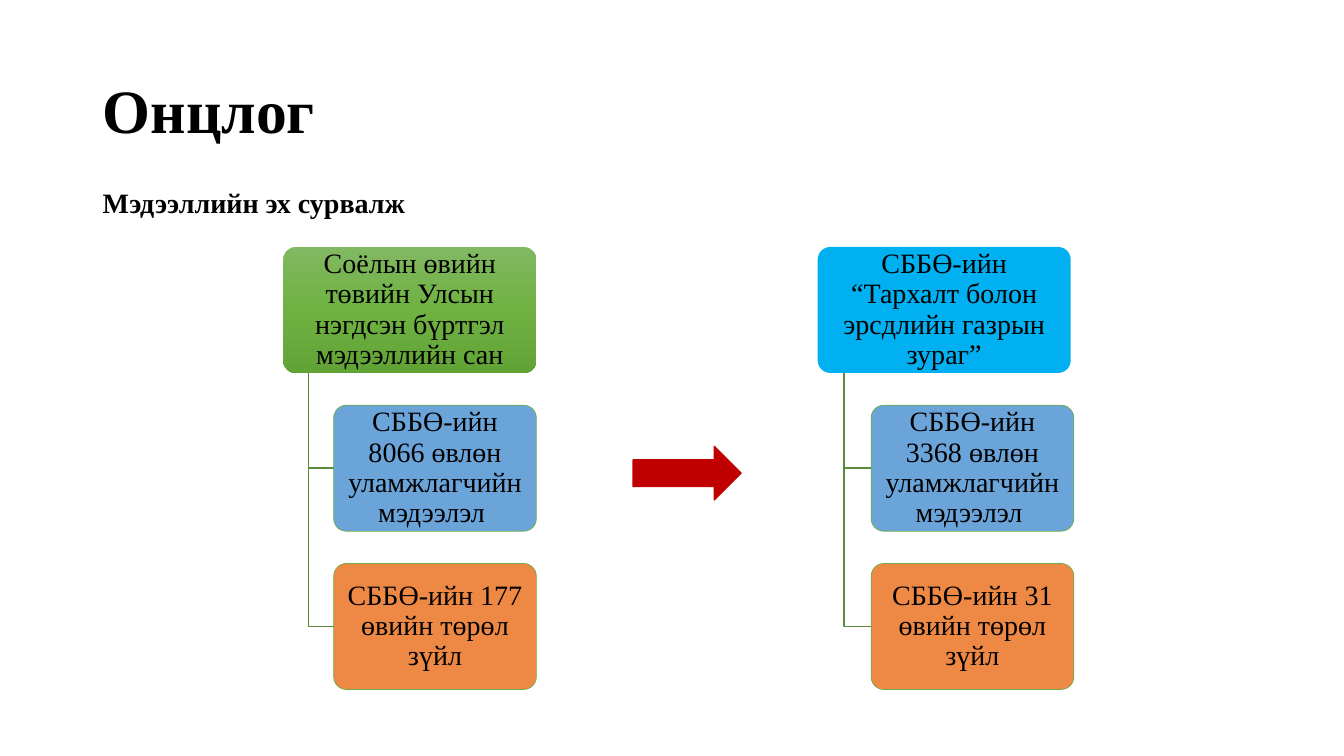
from copy import deepcopy
from dataclasses import dataclass

from lxml import etree
from pptx import Presentation
from pptx.dml.color import RGBColor
from pptx.enum.shapes import MSO_SHAPE
from pptx.enum.text import MSO_ANCHOR, PP_ALIGN
from pptx.oxml.ns import qn
from pptx.util import Inches, Pt

ROUND_RECT = MSO_SHAPE.ROUNDED_RECTANGLE
RIGHT_ARROW = MSO_SHAPE.RIGHT_ARROW
MIDDLE = MSO_ANCHOR.MIDDLE
LEFT, CENTER = PP_ALIGN.LEFT, PP_ALIGN.CENTER

FONT = "Times New Roman"
BLACK, GREEN, DARK_GREEN = "000000", "70AD47", "5A8B39"
BLUE, ORANGE, SKY, RED = "5B9BD5", "ED7D31", "00B0F0", "C00000"
GREEN_GRADIENT = ("81B861", "6FB242", "62A336")

# Tree geometry in inches
TOP, BOX_H, STEP = 2.45, 1.25, 1.57
ROOT_W, CHILD_W = 2.51, 2.01
BOX_FRAME = {"margin_left": Inches(0.04), "margin_right": Inches(0.04),
             "margin_top": Inches(0.03), "margin_bottom": Inches(0.03)}


@dataclass
class Heading:
    text: str
    top: float
    width: float
    height: float
    size: int


@dataclass
class Tree:
    root: str
    fills: tuple[str, ...]
    children: tuple[str, ...]
    left: float
    trunk: float
    child_left: float


HEADINGS = [
    Heading("Онцлог", 0.4, 11.5, 1.45, 44),
    Heading("Мэдээллийн эх сурвалж", 1.7, 4.68, 0.65, 20),
]
TREES = [
    Tree("Соёлын өвийн төвийн Улсын нэгдсэн бүртгэл мэдээллийн сан",
         GREEN_GRADIENT,
         ("СББӨ-ийн 8066 өвлөн уламжлагчийн мэдээлэл ",
          "СББӨ-ийн 177 өвийн төрөл зүйл"),
         2.81, 3.06, 3.31),
    Tree("СББӨ-ийн “Тархалт болон эрсдлийн газрын зураг”",
         (SKY,),
         ("СББӨ-ийн 3368 өвлөн уламжлагчийн мэдээлэл ",
          "СББӨ-ийн 31 өвийн төрөл зүйл"),
         8.11, 8.37, 8.64),
]


def color(value: str) -> RGBColor:
    return RGBColor.from_string(value)


def apply(target, formats: dict) -> None:
    for name, value in formats.items():
        setattr(target, name, value)


def write(sp, text: str, size: int, align, bold: bool = False,
          frame: dict | None = None) -> None:
    tf = sp.text_frame
    apply(tf, {"word_wrap": True, "vertical_anchor": MIDDLE, **(frame or {})})
    p = tf.paragraphs[0]
    apply(p, {"alignment": align, "line_spacing": 0.9})
    r = p.add_run()
    r.text = text
    apply(r.font, {"name": FONT, "size": Pt(size), "bold": bold})
    r.font.color.rgb = color(BLACK)


def paint(sp, fills: tuple[str, ...], alpha: int = 100) -> None:
    """One colour gives a solid fill, three give a vertical gradient."""
    fill = sp.fill
    if len(fills) == 1:
        fill.solid()
        fill.fore_color.rgb = color(fills[0])
        if alpha < 100:
            clr = sp._element.spPr.find(qn("a:solidFill"))[0]
            etree.SubElement(clr, qn("a:alpha"), val=str(alpha * 1000))
        return
    fill.gradient()
    fill.gradient_angle = 270
    stops = sp._element.spPr.find(qn("a:gradFill")).find(qn("a:gsLst"))
    stops.insert(1, deepcopy(stops[0]))
    for i, (stop, value) in enumerate(zip(fill.gradient_stops, fills)):
        stop.position = i / (len(fills) - 1)
        stop.color.rgb = color(value)


def outline(sp, value: str | None, width: float = 1) -> None:
    sp.shadow.inherit = False
    if value is None:
        sp.line.fill.background()
        return
    sp.line.color.rgb = color(value)
    sp.line.width = Pt(width)


def add_box(s, text: str, left: float, top: float, width: float,
            fills: tuple[str, ...], line: str | None = None,
            alpha: int = 100) -> None:
    sp = s.shapes.add_shape(ROUND_RECT, Inches(left), Inches(top),
                            Inches(width), Inches(BOX_H))
    sp.adjustments[0] = 0.1
    paint(sp, fills, alpha)
    outline(sp, line, 0.5)
    write(sp, text, 20, CENTER, frame=BOX_FRAME)


def add_elbow(s, x: float, y: float, end_x: float, end_y: float) -> None:
    path_builder = s.shapes.build_freeform(Inches(x), Inches(y))
    path_builder.add_line_segments(
        [(Inches(x), Inches(end_y)), (Inches(end_x), Inches(end_y))],
        close=False)
    sp = path_builder.convert_to_shape()
    sp.fill.background()
    outline(sp, DARK_GREEN)


def add_tree(s, tree: Tree) -> None:
    add_box(s, tree.root, tree.left, TOP, ROOT_W, tree.fills)
    for i, (text, fill) in enumerate(zip(tree.children, (BLUE, ORANGE)), 1):
        top = TOP + i * STEP
        add_elbow(s, tree.trunk, TOP + BOX_H, tree.child_left, top + BOX_H / 2)
        add_box(s, text, tree.child_left, top, CHILD_W, (fill,), GREEN, 90)


def main() -> None:
    prs = Presentation()
    prs.slide_width, prs.slide_height = Inches(13.33), Inches(7.5)
    s = prs.slides.add_slide(prs.slide_layouts[6])

    # Title and subtitle
    for h in HEADINGS:
        sp = s.shapes.add_textbox(Inches(0.92), Inches(h.top),
                                  Inches(h.width), Inches(h.height))
        write(sp, h.text, h.size, LEFT, bold=True)

    # Source and result trees
    for tree in TREES:
        add_tree(s, tree)

    # Arrow between the trees
    arrow = s.shapes.add_shape(RIGHT_ARROW, Inches(6.28), Inches(4.43),
                               Inches(1.07), Inches(0.53))
    paint(arrow, (RED,))
    outline(arrow, RED)

    prs.save("out.pptx")


if __name__ == "__main__":
    main()
